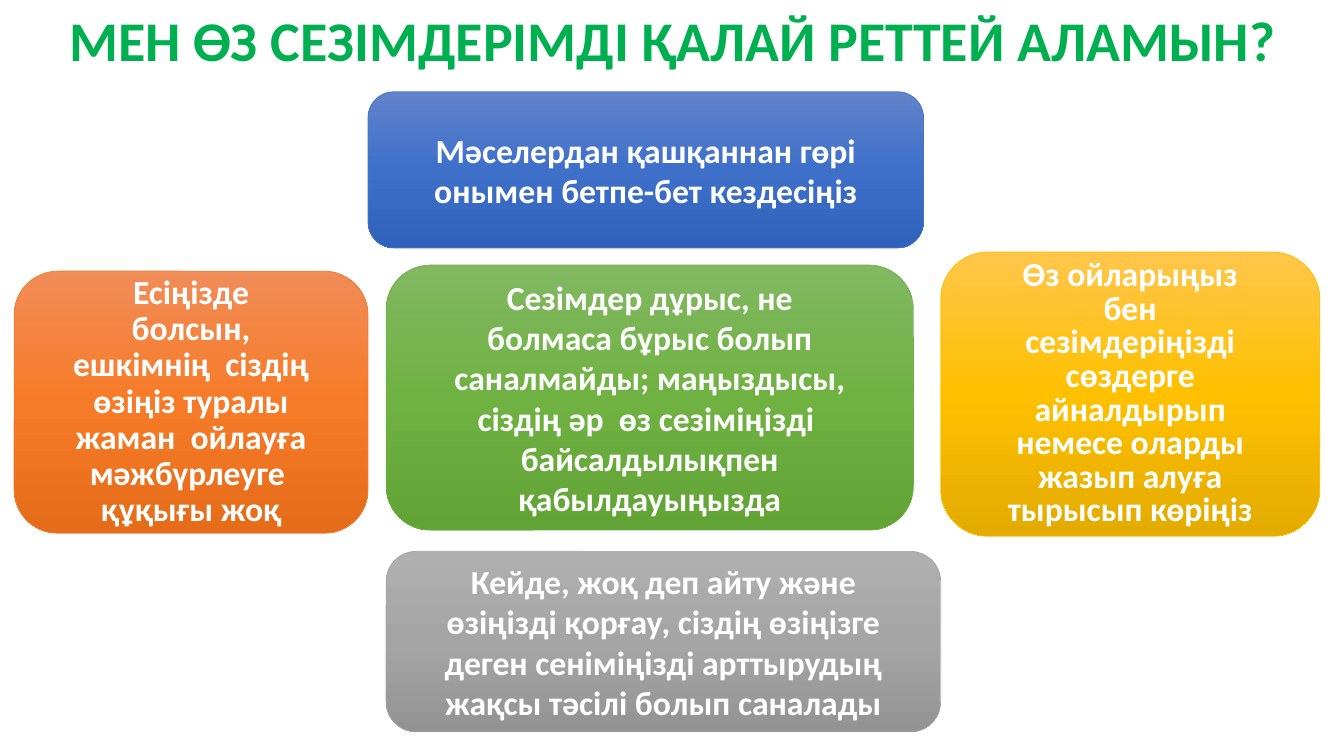
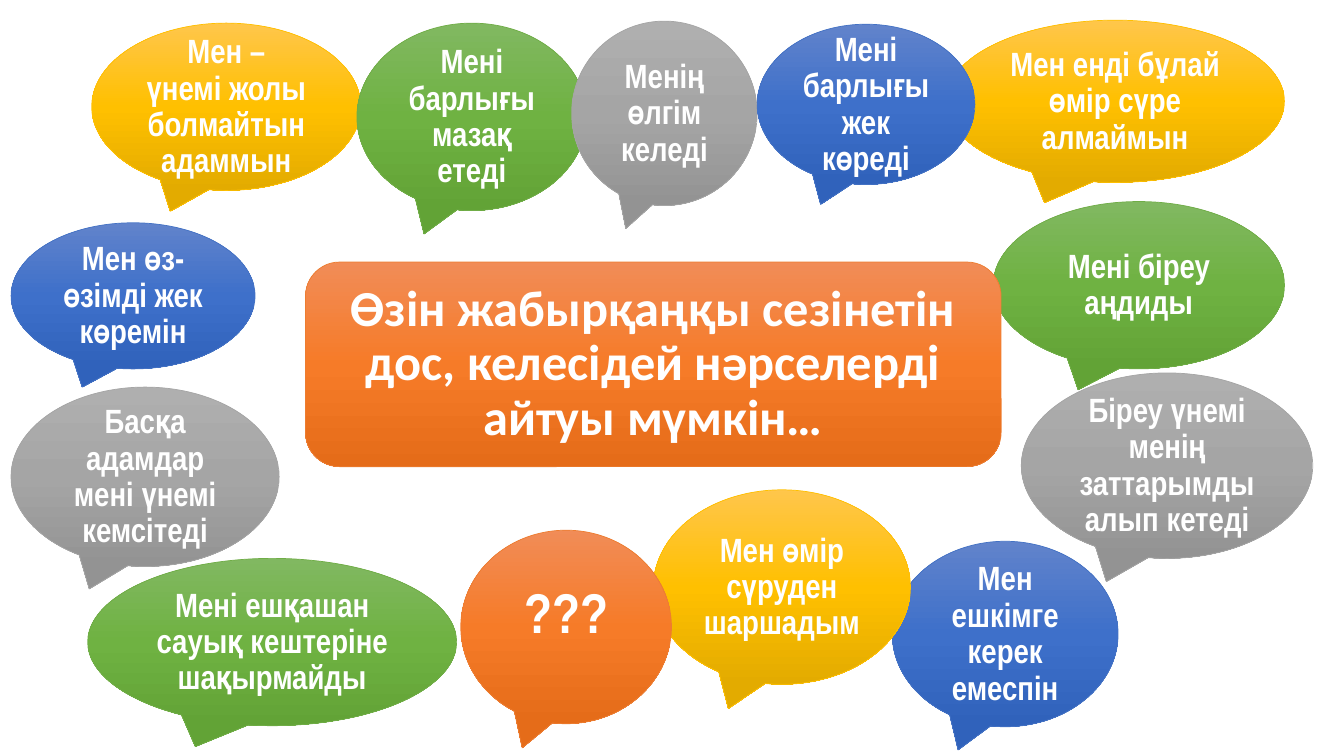
"""Builds two slides on regulating feelings: a board of advice and a ring of speech bubbles."""
import copy
from dataclasses import dataclass
from typing import Optional, Union

import pptx
import pptx.dml.color
import pptx.enum.shapes
import pptx.enum.text
import pptx.oxml.ns
import pptx.util

SLIDE_WIDTH = pptx.util.Inches(13.33)
SLIDE_HEIGHT = pptx.util.Inches(7.5)
GRID = pptx.util.Inches(0.1)
TITLE_ONLY, BLANK = 5, 6

COLORS = {"title": "00B050", "text": "FFFFFF"}
LINES = {
    "blue": "4472C4",
    "green": "70AD47",
    "gray": "A5A5A5",
    "yellow": "FFC000",
    "orange": "ED7D31",
}
GRADIENTS = {
    "blue": ("6183CB", "3E70CA", "3062BB"),
    "green": ("81B861", "6FB242", "62A336"),
    "gray": ("AFAFAF", "A5A5A5", "939393"),
    "yellow": ("FFC64B", "FFC000", "E3AB00"),
    "orange": ("F18C57", "F67B28", "E56C19"),
}
STOP_POSITIONS = (0, 0.5, 1)


@dataclass(frozen=True)
class Style:
    """Outline and type of a family of shapes, with margins in grid units."""

    preset: pptx.enum.shapes.MSO_SHAPE
    font: str
    side_margin: float
    end_margin: float
    size: int = 24
    spacing: Union[float, pptx.util.Length, None] = None


@dataclass(frozen=True)
class Item:
    """A coloured shape placed by columns and rows of the grid."""

    color: str
    column: float
    row: float
    columns: float
    rows: float
    text: str
    style: Optional[Style] = None


ROUNDED = pptx.enum.shapes.MSO_SHAPE.ROUNDED_RECTANGLE
CALLOUT = pptx.enum.shapes.MSO_SHAPE.OVAL_CALLOUT
CARD = Style(ROUNDED, "Calibri", 4.5, 2.9)
TIGHT_CARD = Style(ROUNDED, "Calibri", 4.5, 2.9, spacing=pptx.util.Pt(24))
DENSE_CARD = Style(ROUNDED, "Calibri", 4.5, 2.9, spacing=0.9)
CENTER = Style(ROUNDED, "Calibri", 2.9, 1.4, 36, 0.9)
BUBBLE = Style(CALLOUT, "Arial Narrow", 1.2, 1.2, spacing=pptx.util.Pt(26))
QUESTION = Style(CALLOUT, "Arial Narrow", 1.2, 1.2, 40, pptx.util.Pt(26))

TITLE = "МЕН ӨЗ СЕЗІМДЕРІМДІ ҚАЛАЙ РЕТТЕЙ АЛАМЫН?"
ADVICE = (
    Item("green", 38.3, 26.3, 52.3, 26.3,
         "Сезімдер дұрыс, не болмаса бұрыс болып саналмайды; маңыздысы, "
         "сіздің әр  өз сезіміңізді  байсалдылықпен қабылдауыңызда"),
    Item("blue", 36.5, 9.1, 55.1, 15.5,
         "Мәселердан қашқаннан гөрі онымен бетпе-бет кездесіңіз"),
    Item("yellow", 93.3, 25, 37.6, 28.2,
         "Өз ойларыңыз бен сезімдеріңізді сөздерге айналдырып немесе "
         "оларды жазып алуға тырысып көріңіз", TIGHT_CARD),
    Item("gray", 38.3, 54.7, 55, 17.9,
         "Кейде, жоқ деп айту және өзіңізді қорғау, сіздің өзіңізге деген "
         "сеніміңізді арттырудың жақсы тәсілі болып саналады"),
    Item("orange", 1.4, 26.9, 35.1, 26,
         "Есіңізде болсын, ешкімнің  сіздің өзіңіз туралы жаман  ойлауға "
         "мәжбүрлеуге  құқығы жоқ", DENSE_CARD),
)
THOUGHTS = (
    Item("yellow", 9.1, 2.3, 26.7, 16.6, "Мен –\nүнемі жолы болмайтын адаммын"),
    Item("green", 98.5, 20, 28.9, 16.6, "Мені біреу аңдиды"),
    Item("gray", 101.3, 37, 28.9, 18.4, "Біреу үнемі менің заттарымды алып кетеді"),
    Item("blue", 88.5, 53.7, 22.4, 18.4, "Мен ешкімге керек емеспін"),
    Item("yellow", 64.8, 48.6, 25.5, 19.3, "Мен өмір сүруден шаршадым"),
    Item("green", 8.7, 55.4, 36.6, 16.6, "Мені ешқашан сауық кештеріне шақырмайды"),
    Item("gray", 1.1, 38.4, 26.6, 17.8, "Басқа адамдар мені үнемі кемсітеді"),
    Item("orange", 30.3, 26, 69, 20.3,
         "Өзін жабырқаңқы сезінетін дос, келесідей нәрселерді айтуы мүмкін…", CENTER),
    Item("blue", 1.1, 22.1, 24.2, 14.5, "Мен өз-өзімді жек көремін"),
    Item("green", 35.4, 2.3, 22.8, 18.6, "Мені барлығы мазақ етеді"),
    Item("gray", 56.7, 2.1, 18.4, 18.3, "Менің өлгім келеді"),
    Item("yellow", 93.8, 2, 33.6, 16.1, "Мен енді бұлай өмір сүре алмаймын"),
    Item("blue", 75.1, 2.4, 21.6, 15.9, "Мені барлығы жек көреді"),
    Item("orange", 45.7, 52.6, 20.9, 19.2, "???", QUESTION),
)


def grid(units: float) -> int:
    """Turn grid units into a length."""
    return round(units * GRID)


def rgb(value: str) -> pptx.dml.color.RGBColor:
    """Turn a hex string into a colour."""
    return pptx.dml.color.RGBColor.from_string(value)


def write_text(frame, text: str, font: str, size: int, color: str, spacing) -> None:
    """Write bold centred paragraphs, one for each line of the text."""
    frame.text = text
    frame.word_wrap = True
    frame.auto_size = pptx.enum.text.MSO_AUTO_SIZE.NONE
    frame.vertical_anchor = pptx.enum.text.MSO_ANCHOR.MIDDLE
    for paragraph in frame.paragraphs:
        paragraph.alignment = pptx.enum.text.PP_ALIGN.CENTER
        paragraph.line_spacing = spacing
        paragraph.font.name = font
        paragraph.font.size = pptx.util.Pt(size)
        paragraph.font.bold = True
        paragraph.font.color.rgb = rgb(color)


def fill_gradient(shape, colors: tuple[str, ...]) -> None:
    """Fill a shape from top to bottom with three colours."""
    shape.fill.gradient()
    shape.fill.gradient_angle = 270
    stop_list = shape.element.spPr.find(".//" + pptx.oxml.ns.qn("a:gsLst"))
    stop_list.append(copy.deepcopy(stop_list[-1]))
    for stop, position, color in zip(shape.fill.gradient_stops, STOP_POSITIONS, colors):
        stop.position = position
        stop.color.rgb = rgb(color)


def add_item(slide, item: Item, default_style: Style) -> None:
    """Draw one coloured shape with its text."""
    style = item.style or default_style
    shape = slide.shapes.add_shape(
        style.preset, grid(item.column), grid(item.row), grid(item.columns), grid(item.rows)
    )
    shape.shadow.inherit = False
    fill_gradient(shape, GRADIENTS[item.color])
    shape.line.color.rgb = rgb(LINES[item.color])
    shape.line.width = pptx.util.Pt(0.5)
    frame = shape.text_frame
    frame.margin_left = frame.margin_right = grid(style.side_margin)
    frame.margin_top = frame.margin_bottom = grid(style.end_margin)
    write_text(frame, item.text, style.font, style.size, COLORS["text"], style.spacing)


def add_title(slide, text: str) -> None:
    """Place and format the title placeholder."""
    title = slide.shapes.title
    title.left, title.top = grid(1.8), grid(0.8)
    title.width, title.height = grid(129.8), grid(7.1)
    write_text(title.text_frame, text, "Calibri", 40, COLORS["title"], 0.9)


def main() -> None:
    """Build and save the presentation."""
    presentation = pptx.Presentation()
    presentation.slide_width = SLIDE_WIDTH
    presentation.slide_height = SLIDE_HEIGHT
    for layout, title, items, style in (
        (TITLE_ONLY, TITLE, ADVICE, CARD),
        (BLANK, None, THOUGHTS, BUBBLE),
    ):
        slide = presentation.slides.add_slide(presentation.slide_layouts[layout])
        if title:
            add_title(slide, title)
        for item in items:
            add_item(slide, item, style)
    presentation.save("out.pptx")


if __name__ == "__main__":
    main()
